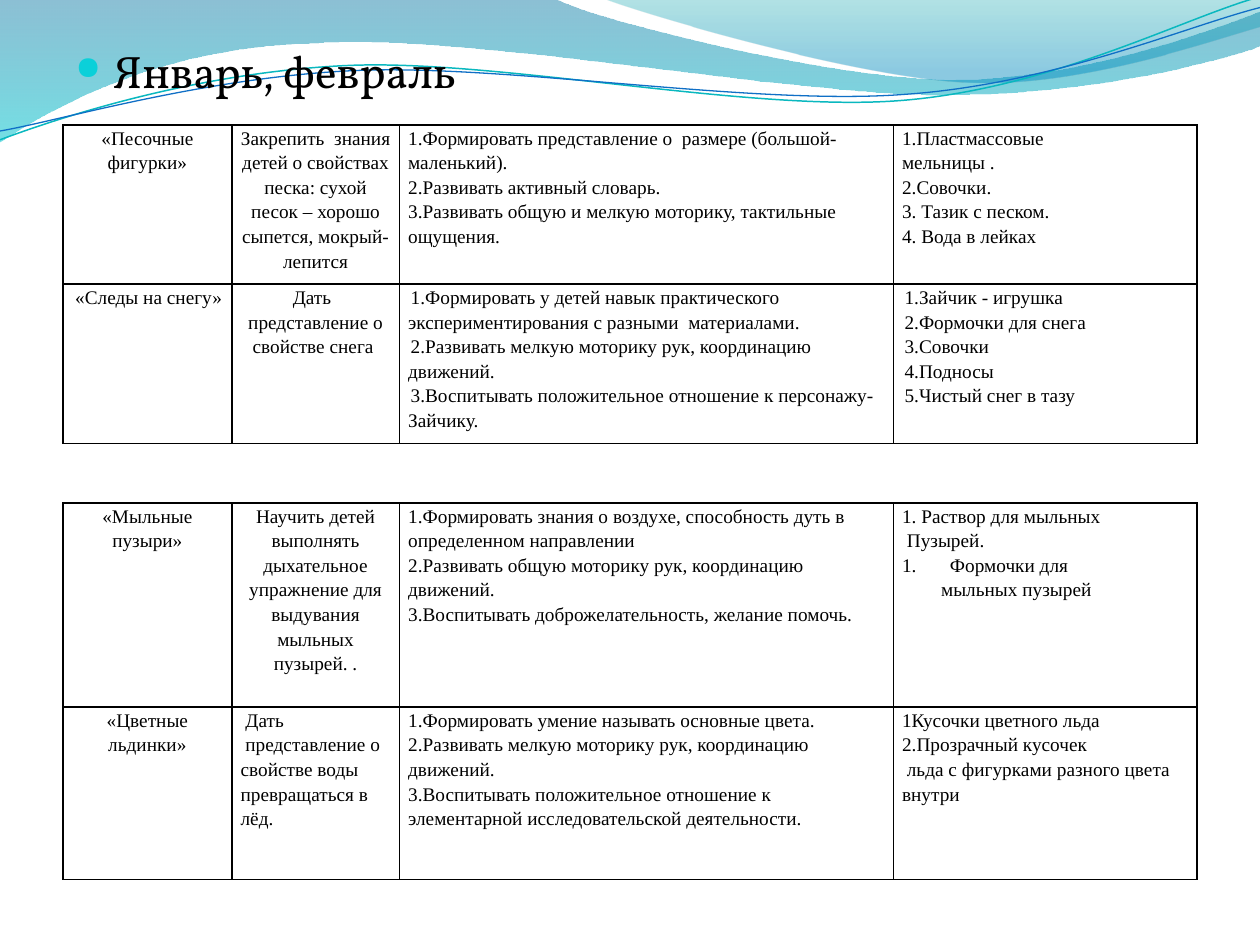
from lxml import etree
from pptx import Presentation
from pptx.dml.color import RGBColor
from pptx.enum.text import PP_ALIGN
from pptx.oxml import parse_xml
from pptx.oxml.ns import nsdecls, qn
from pptx.util import Inches, Pt

LEFT, CENTER = PP_ALIGN.LEFT, PP_ALIGN.CENTER
NBSP = chr(160)
COLORS = {
    "text": "000000", "bullet": "0BD0D9", "teal_line": "0AB8BF", "blue_line": "0F6FC6",
    "deep": "0074A1", "cyan": "00C6CF", "sea": "00A1A9", "sky": "008BBF",
}


def add_wave(page, start, segments, closed):
    builder = page.shapes.build_freeform(Inches(start[0]), Inches(start[1]), scale=1.0)
    points = [(Inches(segment[i]), Inches(segment[i + 1]))
              for segment in segments for i in range(0, len(segment), 2)]
    builder.add_line_segments(points, close=closed)
    wave = builder.convert_to_shape()
    wave.shadow.inherit = False
    lines = iter(list(wave._element.iter(qn("a:lnTo"))))
    for segment in segments:
        first = next(lines)
        if len(segment) == 6:
            first.tag = qn("a:cubicBezTo")
            for _ in range(2):
                extra = next(lines)
                first.append(extra[0])
                extra.getparent().remove(extra)
    return wave


def format_para(para, text, font, para_format, margin=0, indent=0):
    span = para.add_run()
    span.text = text
    span.font.color.rgb = RGBColor.from_string(COLORS["text"])
    for name, value in font.items():
        setattr(span.font, name, value)
    for name, value in para_format.items():
        setattr(para, name, value)
    etree.SubElement(para._p, qn("a:endParaRPr"), sz=str(int(font["size"].pt * 100)))
    properties = para._p.get_or_add_pPr()
    properties.set("marL", str(Inches(margin)))
    properties.set("indent", str(Inches(indent)))
    return properties


deck = Presentation()
deck.slide_width, deck.slide_height = Inches(10), Inches(7.5)
page = deck.slides.add_slide(deck.slide_layouts[6])

bands = [
    ((0, 0), [(4.4, -0.01), (4.76, 0.17, 6.64, 0.63, 7.58, 0.63),
              (8.53, 0.63, 9.58, 0.26, 10, 0.09), (10.01, 0.36),
              (9.83, 0.44, 8.7, 0.76, 7.46, 0.75), (6.22, 0.75, 3.82, 0.28, 2.57, 0.34),
              (1.29, 0.36, 0.46, 0.83, -0.01, 1.13)],
     [(0, "deep", 45), (100, "cyan", 55)]),
    ((4.79, -0.01), [(5.09, 0.11, 6.82, 0.62, 7.69, 0.65),
                     (8.56, 0.69, 9.61, 0.32, 10, 0.21), (10, 0)],
     [(0, "sea", 30), (80, "sky", 45)]),
]
for start, segments, stops in bands:
    band = add_wave(page, start, segments, True)
    band.line.fill.background()
    band.fill.gradient()
    band.fill.gradient_angle = 270
    stop_list = band._element.spPr.find(qn("a:gradFill")).find(qn("a:gsLst"))
    for old_stop in list(stop_list):
        stop_list.remove(old_stop)
    for position, color, opacity in stops:
        stop_list.append(parse_xml(
            f'<a:gs {nsdecls("a")} pos="{position * 1000}"><a:srgbClr val="{COLORS[color]}">'
            f'<a:alpha val="{opacity * 1000}"/></a:srgbClr></a:gs>'))

strands = [
    ((0, 1.11), [(0.48, 0.93, 1.58, 0.57, 2.77, 0.52), (3.95, 0.47, 5.93, 0.89, 7.13, 0.8),
                 (8.33, 0.71, 9.38, 0.15, 9.98, -0.02)], "teal_line", 0.85),
    ((0, 1.04), [(0.47, 0.96, 1.64, 0.61, 2.83, 0.56), (4.03, 0.51, 5.97, 0.84, 7.17, 0.75),
                 (8.36, 0.67, 9.41, 0.21, 10, 0.06)], "blue_line", 0.75),
]
for start, segments, color, width in strands:
    strand = add_wave(page, start, segments, False)
    strand.fill.background()
    strand.line.color.rgb = RGBColor.from_string(COLORS[color])
    strand.line.width = Pt(width)

box = page.shapes.add_textbox(Inches(0.5), Inches(0.29), Inches(9), Inches(6.63))
box.text_frame.word_wrap = True
heading = format_para(box.text_frame.paragraphs[0], "Январь, февраль",
                      {"name": "Vollkorn", "size": Pt(26)},
                      {"alignment": LEFT, "space_before": Pt(4.6)}, 0.3, -0.3)
for xml in (f'<a:buClr {nsdecls("a")}><a:srgbClr val="{COLORS["bullet"]}"/></a:buClr>',
            f'<a:buSzPct {nsdecls("a")} val="71000"/>',
            f'<a:buChar {nsdecls("a")} char="●"/>'):
    heading.append(parse_xml(xml))

CELL_FONT = {"name": "Times New Roman", "size": Pt(11)}
CELL_MARGINS = {"margin_left": Inches(0.07), "margin_right": Inches(0.07),
                "margin_top": 0, "margin_bottom": 0}
COLUMNS = [1.34, 1.33, 3.92, 2.41]
NUMBERED = "Формочки для"
INDENTS = {NUMBERED: (0.38, -0.38), "мыльных пузырей": (0.31, 0)}
CC, CL = (CENTER, CENTER, LEFT, LEFT), (CENTER, LEFT, LEFT, LEFT)

tables = [
    (0.99, [
        (1.18, 0, CC, [
            ["«Песочные фигурки»"],
            [f"Закрепить {NBSP}знания детей о свойствах песка: сухой песок – хорошо сыпется, мокрый- лепится"],
            [f"1.Формировать представление о {NBSP}размере (большой- маленький).",
             "2.Развивать активный словарь.",
             "3.Развивать общую и мелкую моторику, тактильные ощущения."],
            ["1.Пластмассовые", "мельницы .", "2.Совочки.", "3. Тазик с песком.",
             "4. Вода в лейках"]]),
        (1.18, 0.02, CC, [
            ["«Следы на снегу»"],
            [f"Дать {NBSP} представление о свойстве снега "],
            [f"1.Формировать у детей навык практического экспериментирования с разными {NBSP}материалами.",
             "2.Развивать мелкую моторику рук, координацию движений.",
             "3.Воспитывать положительное отношение к персонажу-Зайчику."],
            ["1.Зайчик - игрушка", "2.Формочки для снега", "3.Совочки", "4.Подносы",
             "5.Чистый снег в тазу"]]),
    ]),
    (3.99, [
        (1.62, 0, CC, [
            ["«Мыльные пузыри»"],
            [f"Научить детей выполнять дыхательное упражнение для выдувания мыльных пузырей.{NBSP}."],
            ["1.Формировать знания о воздухе, способность дуть в определенном направлении",
             "2.Развивать общую моторику рук, координацию движений.",
             "3.Воспитывать доброжелательность, желание помочь."],
            ["1. Раствор для мыльных", " Пузырей.", NUMBERED, "мыльных пузырей"]]),
        (1.37, 0, CL, [
            ["«Цветные льдинки»"],
            [f"{NBSP}Дать {NBSP}представление о свойстве воды превращаться в лёд."],
            ["1.Формировать умение называть основные цвета.",
             "2.Развивать мелкую моторику рук, координацию движений.",
             "3.Воспитывать положительное отношение к элементарной исследовательской деятельности."],
            ["1Кусочки цветного льда", "2.Прозрачный кусочек",
             " льда с фигурками разного цвета", "внутри"]]),
    ]),
]
for top, rows in tables:
    height = sum(row[0] for row in rows)
    table = page.shapes.add_table(len(rows), len(COLUMNS), Inches(0.5), Inches(top),
                                  Inches(9), Inches(height)).table
    table.first_row = table.horz_banding = False
    for column, width in zip(table.columns, COLUMNS):
        column.width = Inches(width)
    for row_index, (row_height, first_indent, alignments, texts) in enumerate(rows):
        table.rows[row_index].height = Inches(row_height)
        for column_index, (alignment, lines) in enumerate(zip(alignments, texts)):
            cell = table.cell(row_index, column_index)
            for name, value in CELL_MARGINS.items():
                setattr(cell, name, value)
            for line_index, line in enumerate(lines):
                frame = cell.text_frame
                para = frame.add_paragraph() if line_index else frame.paragraphs[0]
                properties = format_para(para, line, CELL_FONT,
                                         {"alignment": alignment, "line_spacing": 1.15},
                                         *INDENTS.get(line, (0, first_indent)))
                if line == NUMBERED:
                    etree.SubElement(properties, qn("a:buFont"), typeface="+mj-lt")
                    etree.SubElement(properties, qn("a:buAutoNum"), type="arabicPeriod")
            cell_properties = cell._tc.get_or_add_tcPr()
            for side in "LRTB":
                cell_properties.append(parse_xml(
                    f'<a:ln{side} {nsdecls("a")} w="{Pt(1)}"><a:solidFill>'
                    f'<a:srgbClr val="{COLORS["text"]}"/></a:solidFill></a:ln{side}>'))
            cell.fill.background()

deck.save("out.pptx")
